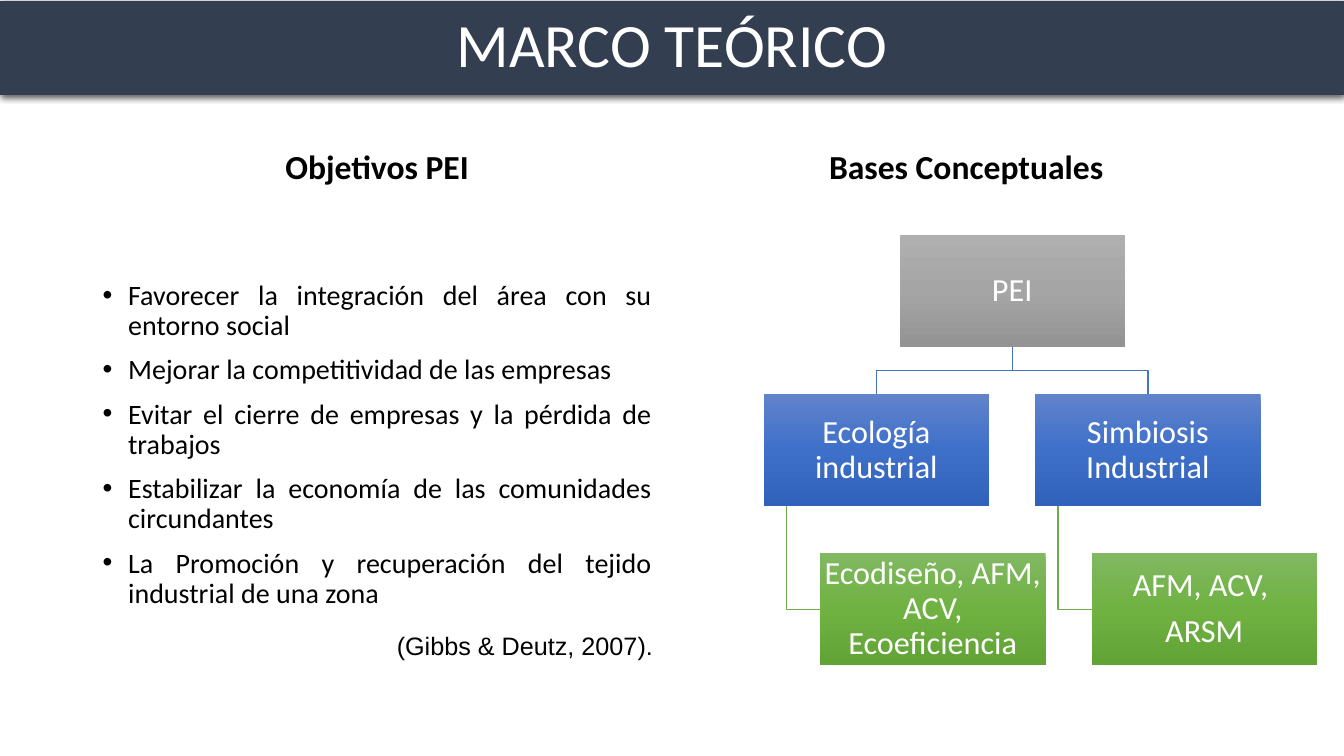
"""Builds the theoretical framework slide: goals of eco-industrial parks and their conceptual bases."""
from copy import deepcopy

from pptx import Presentation, oxml
from pptx.dml.color import RGBColor
from pptx.enum import shapes, text
from pptx.oxml import ns
from pptx.util import Cm, Pt

COLORS = {"navy": "333F50", "black": "000000", "white": "FFFFFF", "blue": "4472C4", "green": "70AD47"}
GRADIENTS = {
    "gray": ["AFAFAF", "A5A5A5", "939393"],
    "blue": ["6183CB", "3E70CA", "3062BB"],
    "green": ["81B861", "6FB242", "62A336"],
}
CENTER, JUSTIFY = text.PP_ALIGN.CENTER, text.PP_ALIGN.JUSTIFY
MIDDLE, TOP = text.MSO_ANCHOR.MIDDLE, text.MSO_ANCHOR.TOP


def write(shape, content, size, color, align, anchor, font="Calibri", bold=False, spacing=0.9):
    """Fill a shape with uniformly formatted paragraphs."""
    frame = shape.text_frame
    frame.text = content
    frame.word_wrap = True
    frame.vertical_anchor = anchor
    for para in frame.paragraphs:
        para.alignment = align
        para.line_spacing = spacing
        for span in para.runs:
            span.font.name = font
            span.font.size = Pt(size)
            span.font.bold = bold
            span.font.color.rgb = RGBColor.from_string(COLORS[color])
    return frame


def draw_link(page, points, color):
    """Draw an open elbow line through points given in centimetres."""
    start, *rest = [(Cm(x), Cm(y)) for x, y in points]
    builder = page.shapes.build_freeform(*start)
    builder.add_line_segments(rest, close=False)
    link = builder.convert_to_shape()
    link.shadow.inherit = False
    link.fill.background()
    link.line.color.rgb = RGBColor.from_string(COLORS[color])
    link.line.width = Pt(1)


deck = Presentation()
deck.slide_width, deck.slide_height = Cm(33.87), Cm(19.05)
page = deck.slides.add_slide(deck.slide_layouts[5])

title = page.shapes.title
title.left, title.top, title.width, title.height = Cm(0), Cm(0.03), Cm(33.87), Cm(2.36)
title.fill.solid()
title.fill.fore_color.rgb = RGBColor.from_string(COLORS["navy"])
write(title, "MARCO TEÓRICO", 44, "white", CENTER, MIDDLE)
title._element.spPr.append(oxml.parse_xml(
    f'<a:effectLst {ns.nsdecls("a")}><a:outerShdw blurRad="57150" dist="19050" dir="5400000" algn="ctr" '
    f'rotWithShape="0"><a:srgbClr val="{COLORS["black"]}"><a:alpha val="63000"/></a:srgbClr>'
    '</a:outerShdw></a:effectLst>'))

for heading, left, width in [("Objetivos PEI", 2.34, 14.33), ("Bases Conceptuales", 17.15, 14.4)]:
    box = page.shapes.add_textbox(Cm(left), Cm(3.1), Cm(width), Cm(2.29))
    write(box, heading, 24, "black", CENTER, MIDDLE, bold=True)

goals = [
    "Favorecer la integración del área con su entorno social",
    "Mejorar la competitividad de las empresas",
    "Evitar el cierre de empresas y la pérdida de trabajos",
    "Estabilizar la economía de las comunidades circundantes",
    "La Promoción y recuperación del tejido industrial de una zona",
]
goal_box = page.shapes.add_textbox(Cm(2.34), Cm(6.96), Cm(14.33), Cm(10.24))
for para in write(goal_box, "\n".join(goals), 20, "black", JUSTIFY, TOP).paragraphs:
    para.space_before = Pt(10)
    properties = para._p.get_or_add_pPr()
    properties.set("marL", str(Cm(0.64)))
    properties.set("indent", str(Cm(-0.64)))
    properties.append(oxml.parse_xml(f'<a:buFont {ns.nsdecls("a")} typeface="Arial"/>'))
    properties.append(oxml.parse_xml(f'<a:buChar {ns.nsdecls("a")} char="•"/>'))

BOX_W, BOX_H = 5.68, 2.83
COLUMN, COLUMN_STEP = 19.25, 6.84
ROOT_Y, BRANCH_Y, LEAF_Y = [5.92 + 4.01 * row for row in range(3)]
ROOT_X = COLUMN + COLUMN_STEP / 2
LEAF_INDENT, TRUNK_INDENT = 1.42, 0.57

nodes = [("PEI", ROOT_X, ROOT_Y, "gray")]
branches = [("Ecología industrial", "Ecodiseño, AFM, ACV, Ecoeficiencia"),
            ("Simbiosis Industrial", "AFM, ACV, \nARSM")]
for index, (branch, leaf) in enumerate(branches):
    x = COLUMN + index * COLUMN_STEP
    nodes += [(branch, x, BRANCH_Y, "blue"), (leaf, x + LEAF_INDENT, LEAF_Y, "green")]
    root_mid, branch_mid, trunk = ROOT_X + BOX_W / 2, x + BOX_W / 2, x + TRUNK_INDENT
    elbow_y, leaf_mid = (ROOT_Y + BOX_H + BRANCH_Y) / 2, LEAF_Y + BOX_H / 2
    draw_link(page, [(root_mid, ROOT_Y + BOX_H), (root_mid, elbow_y),
                     (branch_mid, elbow_y), (branch_mid, BRANCH_Y)], "blue")
    draw_link(page, [(trunk, BRANCH_Y + BOX_H), (trunk, leaf_mid), (x + LEAF_INDENT, leaf_mid)], "green")

for label, x, y, tone in nodes:
    box = page.shapes.add_shape(shapes.MSO_SHAPE.RECTANGLE, Cm(x), Cm(y), Cm(BOX_W), Cm(BOX_H))
    box.shadow.inherit = False
    box.line.fill.background()
    box.fill.gradient()
    box.fill.gradient_angle = 270
    stop_list = box._element.spPr.find(".//" + ns.qn("a:gsLst"))
    stop_list.insert(1, deepcopy(stop_list[0]))
    for stop, color, position in zip(box.fill.gradient_stops, GRADIENTS[tone], (0, 0.5, 1)):
        stop.color.rgb = RGBColor.from_string(color)
        stop.position = position
    frame = write(box, label, 23, "white", CENTER, MIDDLE)
    frame.margin_left = frame.margin_right = frame.margin_top = frame.margin_bottom = Cm(0.05)
    for para in frame.paragraphs:
        para.space_after = Pt(8)

source = page.shapes.add_textbox(Cm(9.75), Cm(15.75), Cm(7.19), Cm(1.02))
frame = write(source, "(Gibbs & Deutz, 2007).", 18, "black", text.PP_ALIGN.LEFT, TOP, font="Arial", spacing=1.0)
frame.word_wrap = False
frame.auto_size = text.MSO_AUTO_SIZE.SHAPE_TO_FIT_TEXT

deck.save("out.pptx")
